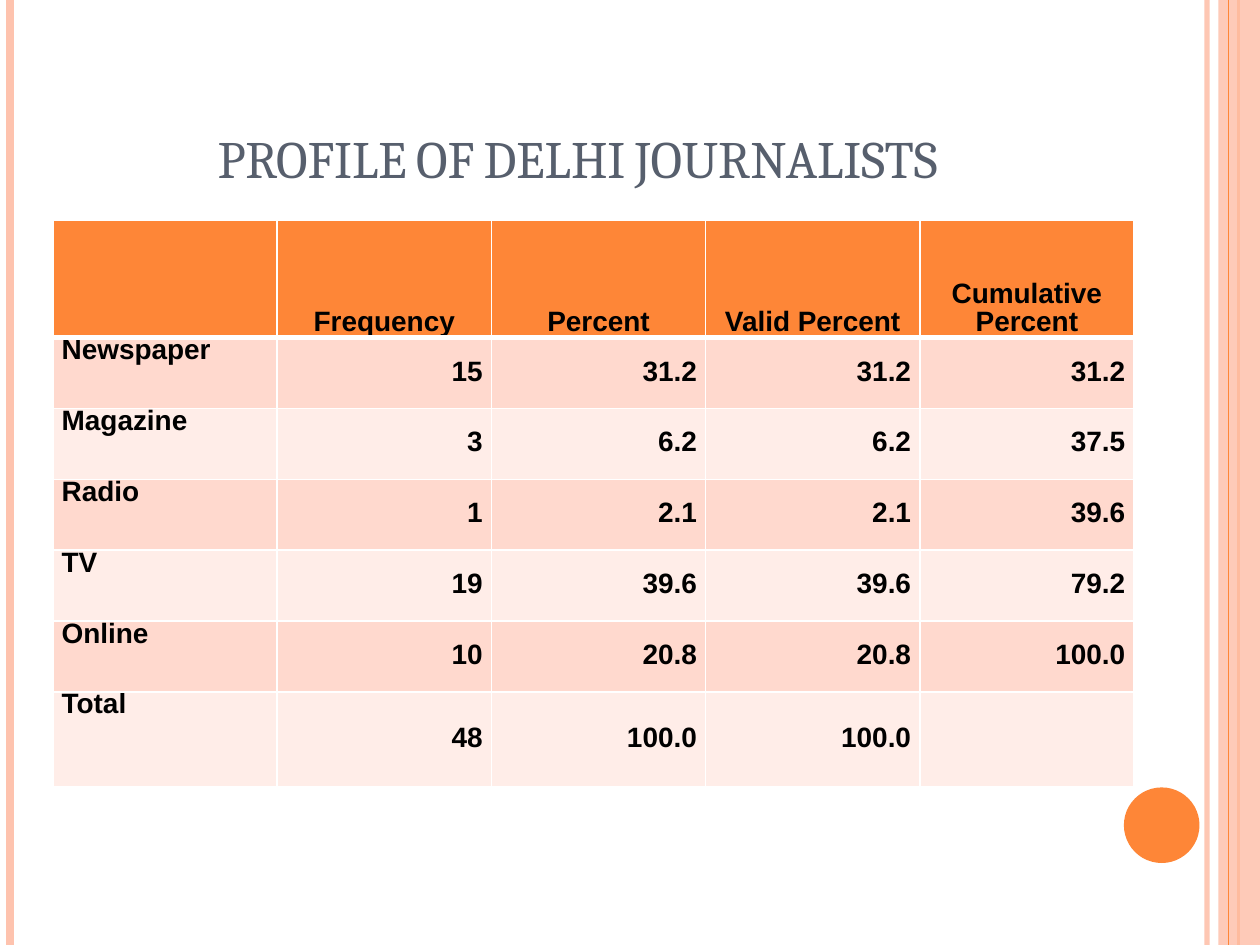
"""Build a slide with a table profiling Delhi journalists by medium."""
from lxml.etree import SubElement
from pptx import Presentation
from pptx.dml.color import RGBColor
from pptx.enum.shapes import MSO_CONNECTOR, MSO_SHAPE
from pptx.enum.text import MSO_ANCHOR as Anchor, PP_ALIGN as Align
from pptx.oxml.ns import qn
from pptx.util import Inches, Pt

WIDTH, HEIGHT = Inches(10), Inches(7.5)
ORANGE, PEACH, WHITE = "FE8637", "FEC3AE", "FFFFFF"
BANDS = ("FFD9CE", "FFEDE8")
COLUMNS = (17.8, 17, 17, 17, 17)
ROWS = (12.4, 7.5, 7.5, 7.5, 7.5, 7.5, 10)
PROFILE = (
    ("", "Frequency", "Percent", "Valid Percent", "Cumulative Percent"),
    ("Newspaper", "15", "31.2", "31.2", "31.2"),
    ("Magazine", "3", "6.2", "6.2", "37.5"),
    ("Radio", "1", "2.1", "2.1", "39.6"),
    ("TV", "19", "39.6", "39.6", "79.2"),
    ("Online", "10", "20.8", "20.8", "100.0"),
    ("Total", "48", "100.0", "100.0", ""),
)


def across(percent):
    """Return a share of the slide's width."""
    return int(WIDTH * percent / 100)


def down(percent):
    """Return a share of the slide's height."""
    return int(HEIGHT * percent / 100)


def paint(color_format, color):
    """Apply a hex colour to a colour format."""
    color_format.rgb = RGBColor.from_string(color)


def set_opacity(properties, percent):
    """Make the solid colour inside a properties element translucent."""
    color = next(properties.iter(qn("a:srgbClr")))
    SubElement(color, qn("a:alpha"), val=str(percent * 1000))


def add_stripe(slide, x, color, weight, opacity=100):
    """Draw a vertical line over the full height of the slide."""
    stripe = slide.shapes.add_connector(
        MSO_CONNECTOR.STRAIGHT, across(x), 0, across(x), HEIGHT)
    stripe.line.width = Pt(weight)
    stripe.line.fill.solid()
    paint(stripe.line.color, color)
    properties = stripe._element.spPr
    if opacity < 100:
        set_opacity(properties, opacity)
    SubElement(properties, qn("a:effectLst"))


def add_block(slide, kind, box, color, opacity=100):
    """Draw a filled shape without outline, its box given in percent."""
    left, top, width, height = box
    shape = slide.shapes.add_shape(
        kind, across(left), down(top), across(width), down(height))
    shape.shadow.inherit = False
    shape.line.fill.background()
    shape.fill.solid()
    paint(shape.fill.fore_color, color)
    if opacity < 100:
        set_opacity(shape._element.spPr, opacity)


def add_run(paragraph, text, font, size, color, bold=False):
    """Append one formatted run and return it."""
    run = paragraph.add_run()
    run.text = text
    run.font.name, run.font.size, run.font.bold = font, Pt(size), bold
    paint(run.font.color, color)
    return run


def add_title(slide, text):
    """Place the centred title in small capitals."""
    box = slide.shapes.add_textbox(across(5), down(4), across(81.7), down(16.67))
    frame = box.text_frame
    frame.word_wrap = True
    frame.vertical_anchor = Anchor.BOTTOM
    paragraph = frame.paragraphs[0]
    paragraph.alignment = Align.CENTER
    run = add_run(paragraph, text, "Cambria", 30, "575F6D")
    run._r.get_or_add_rPr().set("cap", "small")


def add_borders(cell, weights):
    """Give a cell white borders with a weight for each side."""
    properties = cell._tc.get_or_add_tcPr()
    for side, weight in weights.items():
        line = SubElement(properties, qn(f"a:ln{side}"), w=str(Pt(weight)))
        fill = SubElement(line, qn("a:solidFill"))
        SubElement(fill, qn("a:srgbClr"), val=WHITE)


def fill_cell(cell, text, row, column):
    """Format and fill a cell according to its place in the table."""
    add_borders(cell, {"L": 1, "R": 1, "T": 3 if row == 1 else 1,
                       "B": 3 if row == 0 else 1})
    cell.fill.solid()
    paint(cell.fill.fore_color, BANDS[(row - 1) % 2] if row else ORANGE)
    cell.margin_left = cell.margin_right = Inches(0.07)
    cell.margin_top = cell.margin_bottom = 0
    if row == 0:
        anchor, alignment = Anchor.BOTTOM, Align.CENTER
    elif column == 0:
        anchor, alignment = Anchor.TOP, Align.LEFT
    else:
        anchor, alignment = Anchor.MIDDLE, Align.RIGHT
    cell.vertical_anchor = anchor
    if text:
        paragraph = cell.text_frame.paragraphs[0]
        paragraph.alignment, paragraph.line_spacing = alignment, Pt(16)
        add_run(paragraph, text, "Arial", 16, "000000", bold=True)


def add_profile_table(slide):
    """Place the table of journalists by medium."""
    table = slide.shapes.add_table(
        len(ROWS), len(COLUMNS), across(4.2), down(23.33),
        across(sum(COLUMNS)), down(sum(ROWS))).table
    table.first_row = table.horz_banding = False
    for column, width in zip(table.columns, COLUMNS):
        column.width = across(width)
    for row, height in zip(table.rows, ROWS):
        row.height = down(height)
    for row, texts in enumerate(PROFILE):
        for column, text in enumerate(texts):
            fill_cell(table.cell(row, column), text, row, column)


def main():
    """Assemble and save the presentation."""
    presentation = Presentation()
    presentation.slide_width, presentation.slide_height = WIDTH, HEIGHT
    slide = presentation.slides.add_slide(presentation.slide_layouts[6])
    add_stripe(slide, 95.8, PEACH, 3, opacity=93)
    add_stripe(slide, 0.8, PEACH, 4.5)
    add_stripe(slide, 98.3, ORANGE, 1.5)
    add_block(slide, MSO_SHAPE.RECTANGLE, (96.7, 0, 3.3, 100), PEACH, opacity=87)
    add_stripe(slide, 97.5, ORANGE, 0.75)
    add_block(slide, MSO_SHAPE.OVAL, (89.2, 83.33, 6, 8), ORANGE)
    add_title(slide, "PROFILE OF DELHI JOURNALISTS")
    add_profile_table(slide)
    presentation.save("out.pptx")


if __name__ == "__main__":
    main()
